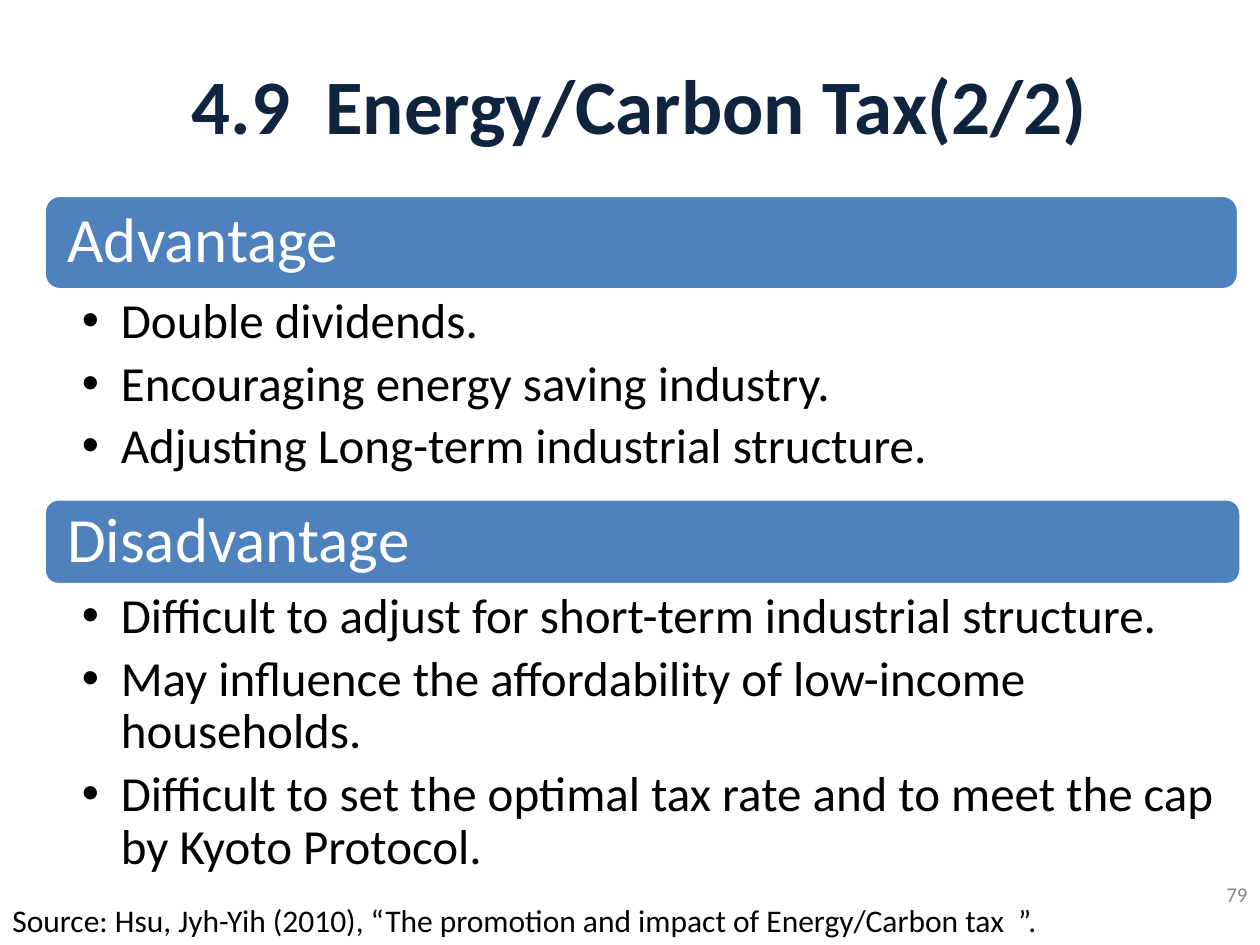
from lxml.etree import SubElement
from pptx import Presentation
from pptx.dml.color import RGBColor
from pptx.enum.shapes import MSO_SHAPE as Shape
from pptx.enum.text import MSO_ANCHOR as Anchor, PP_ALIGN as Align
from pptx.oxml.ns import qn
from pptx.util import Inches, Pt

NAVY = RGBColor(0x0F, 0x24, 0x3E)
BLUE = RGBColor(0x4F, 0x81, 0xBD)
WHITE = RGBColor(0xFF, 0xFF, 0xFF)
BLACK = RGBColor(0x00, 0x00, 0x00)
GRAY = RGBColor(0x88, 0x88, 0x88)

LEFT = 0.35
WIDTH = 9.5


class SlideBuilder:
    """Holds the text style and the current slide."""

    font_name = "Calibri"
    plain_insets = (0.1, 0.05, 0.1, 0.05)
    heading_insets = (0.15, 0.15, 0.15, 0.15)
    list_insets = (0.3, 0.04, 0.22, 0.04)
    bullet_indent = 0.31

    def __init__(self, page):
        self.page = page

    def apply(self, target, values):
        for name, value in values.items():
            setattr(target, name, value)

    def set_frame(self, box, insets, anchor):
        left, top, right, bottom = (Inches(inset) for inset in insets)
        self.apply(box.text_frame, {
            "word_wrap": True, "vertical_anchor": anchor,
            "margin_left": left, "margin_top": top,
            "margin_right": right, "margin_bottom": bottom,
        })

    def fill_para(self, para, text, size, color, bold=False, **layout):
        self.apply(para, layout)
        span = para.add_run()
        span.text = text
        self.apply(span.font, {"name": self.font_name, "size": Pt(size), "bold": bold})
        span.font.color.rgb = color

    def add_box(self, place, insets, anchor=Anchor.TOP):
        box = self.page.shapes.add_textbox(*(Inches(length) for length in place))
        self.set_frame(box, insets, anchor)
        return box

    def add_text(self, place, text, size, color, anchor=Anchor.TOP,
                 align=Align.LEFT, bold=False):
        box = self.add_box(place, self.plain_insets, anchor)
        self.fill_para(box.text_frame.paragraphs[0], text, size, color, bold,
                       alignment=align)

    def add_heading(self, place, text):
        bar = self.page.shapes.add_shape(
            Shape.ROUNDED_RECTANGLE, *(Inches(length) for length in place))
        bar.shadow.inherit = False
        bar.fill.solid()
        bar.fill.fore_color.rgb = BLUE
        bar.line.color.rgb = WHITE
        bar.line.width = Pt(2)
        self.set_frame(bar, self.heading_insets, Anchor.MIDDLE)
        self.fill_para(bar.text_frame.paragraphs[0], text, 36, WHITE,
                       alignment=Align.LEFT, line_spacing=0.9)

    def add_bullets(self, place, items):
        frame = self.add_box(place, self.list_insets).text_frame
        for index, item in enumerate(items):
            para = frame.add_paragraph() if index else frame.paragraphs[0]
            self.add_bullet_mark(para)
            self.fill_para(para, item, 28, BLACK, level=1, line_spacing=0.9,
                           space_before=Pt(5.6 if index else 0))

    def add_bullet_mark(self, para):
        props = para._p.get_or_add_pPr()
        indent = Inches(self.bullet_indent)
        props.set("marL", str(indent))
        props.set("indent", str(-indent))
        color = SubElement(props, qn("a:buClr"))
        SubElement(color, qn("a:srgbClr")).set("val", str(BLACK))
        SubElement(props, qn("a:buFont")).set("typeface", "Arial")
        SubElement(props, qn("a:buChar")).set("char", "•")


def main():
    deck = Presentation()
    deck.slide_width, deck.slide_height = Inches(10), Inches(7.5)
    slide = SlideBuilder(deck.slides.add_slide(deck.slide_layouts[6]))

    # Title
    slide.add_text((0.33, 0.36, WIDTH, 0.92), "4.9  Energy/Carbon Tax(2/2)", 44, NAVY,
                   Anchor.MIDDLE, Align.CENTER, bold=True)

    # Advantages
    slide.add_heading((LEFT, 1.55, 9.48, 0.75), "Advantage")
    slide.add_bullets((LEFT, 2.31, WIDTH, 1.56), [
        "Double dividends.",
        "Encouraging energy saving industry.",
        "Adjusting Long-term industrial structure.",
    ])

    # Disadvantages
    slide.add_heading((LEFT, 3.96, WIDTH, 0.68), "Disadvantage")
    slide.add_bullets((LEFT, 4.65, WIDTH, 2.46), [
        "Difficult to adjust for short-term industrial structure.",
        "May influence the affordability of low-income households.",
        "Difficult to set the optimal tax rate and to meet the cap by Kyoto Protocol.",
    ])

    # Page number and source
    slide.add_text((9.49, 6.9, 0.51, 0.4), "79", 12, GRAY, Anchor.MIDDLE, Align.RIGHT)
    slide.add_text(
        (0, 7.1, 8.78, 0.4),
        "Source: Hsu, Jyh-Yih (2010), “The promotion and impact of Energy/Carbon tax  ”.",
        18, BLACK)

    deck.save("out.pptx")


if __name__ == "__main__":
    main()
